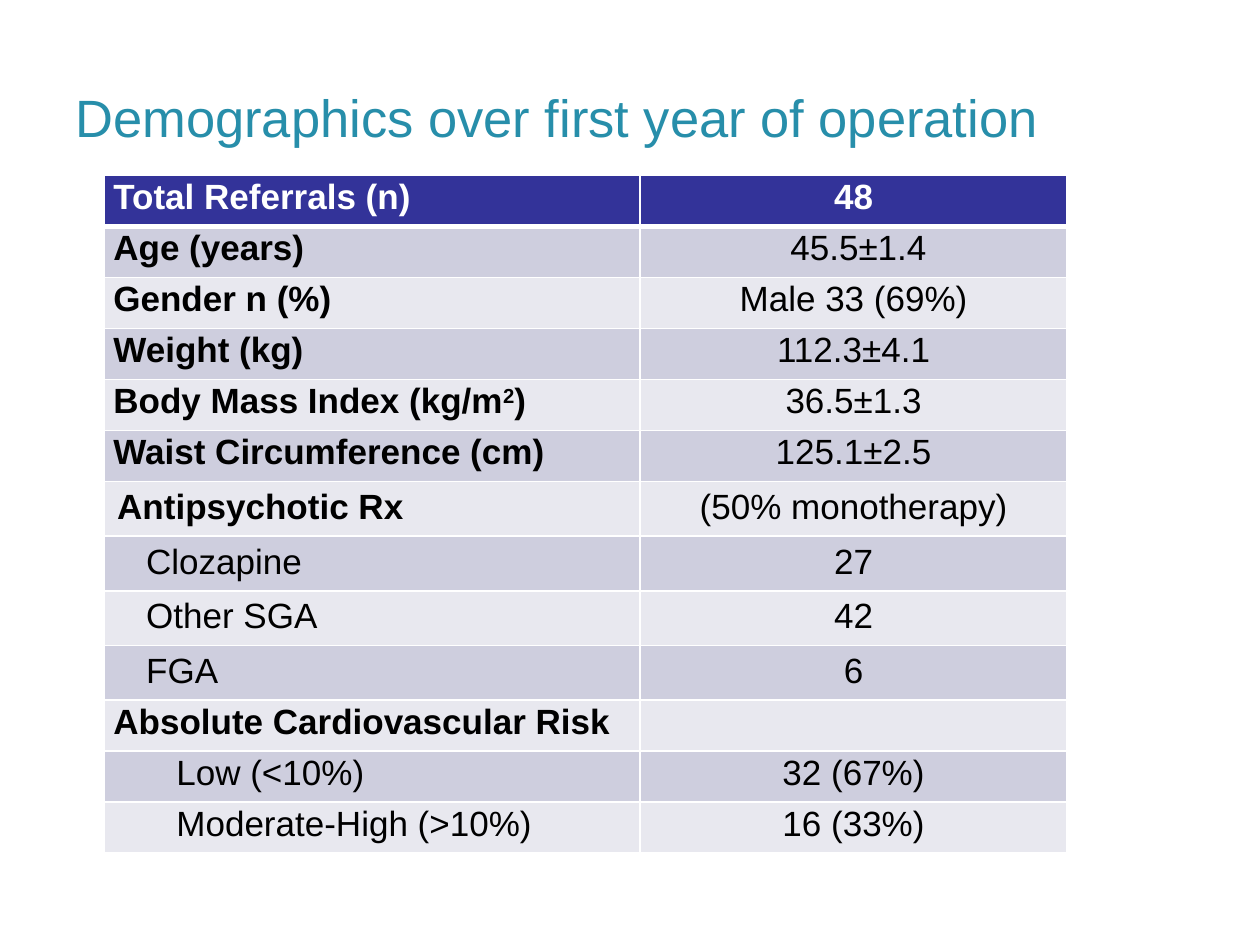
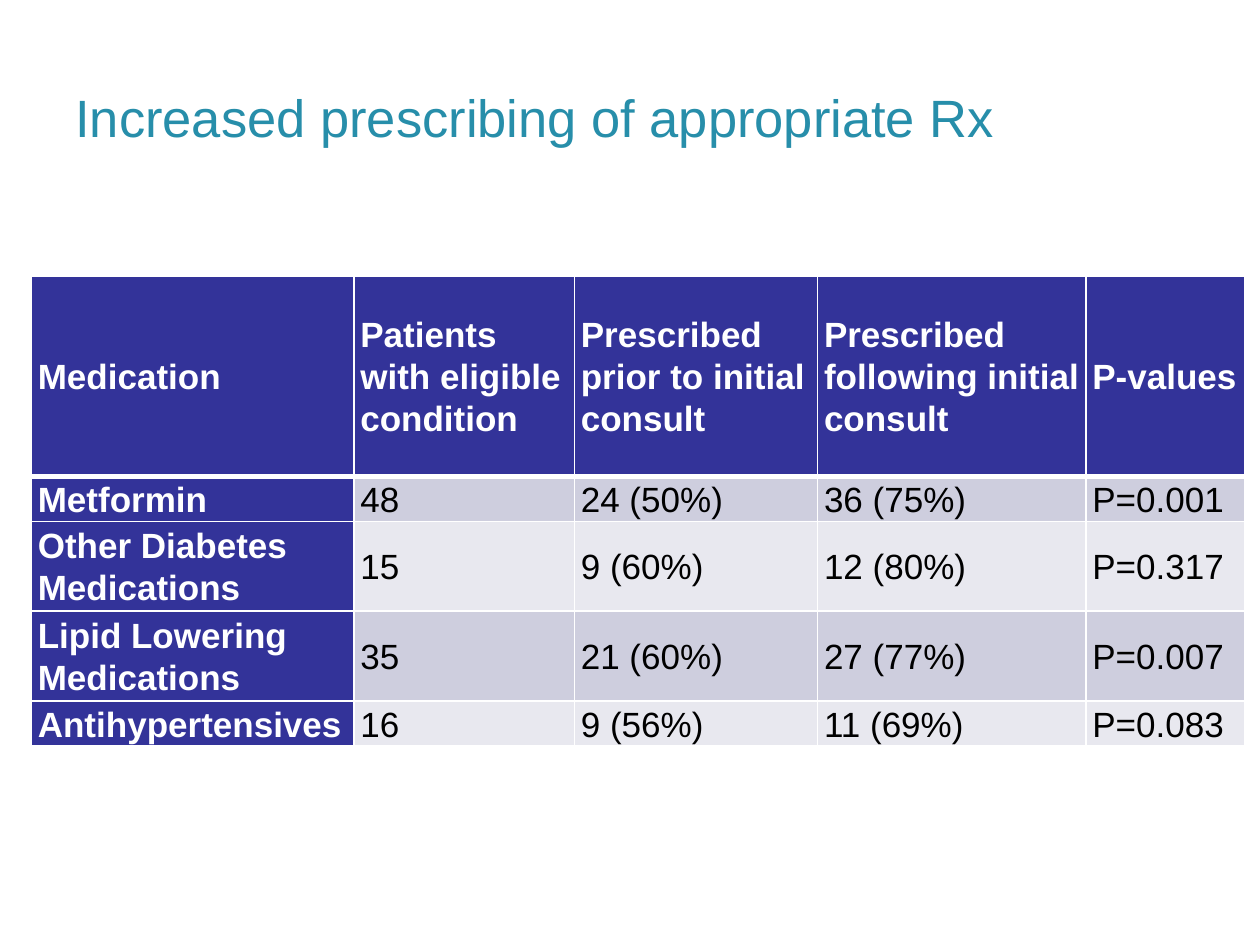
"""Build two clinic result slides, each with a title and a table."""
from lxml.etree import SubElement
from pptx import Presentation
from pptx.dml.color import RGBColor
from pptx.enum.text import MSO_ANCHOR, PP_ALIGN
from pptx.oxml.ns import qn
from pptx.util import Inches, Pt

FONT = "Arial"
TITLE_COLOUR = "278EAA"
HEADER_FILL = "333399"
BAND_FILLS = ("CECEDE", "E8E8EF")
WHITE, BLACK = "FFFFFF", "000000"
TITLE_BOX = (0.5, 0.3, 9, 1.25)

DEMOGRAPHICS_TITLE = "Demographics over first year of operation"
DEMOGRAPHICS = [
    ("Total Referrals (n)", "48"),
    ("Age (years)", " 45.5±1.4"),
    ("Gender n (%)", "Male 33 (69%)"),
    ("Weight (kg)", "112.3±4.1"),
    ("Body Mass Index (kg/m²)", "36.5±1.3"),
    ("Waist Circumference (cm)", "125.1±2.5"),
    ("Antipsychotic Rx", "(50% monotherapy)"),
    ("Clozapine", "27"),
    ("Other SGA", "42"),
    ("FGA", "6"),
    ("Absolute Cardiovascular Risk", ""),
    ("Low (<10%)", "32 (67%)"),
    ("Moderate-High (>10%)", "16 (33%)"),
]
DEMOGRAPHICS_HEIGHT = 5.27
DEMOGRAPHICS_INDENTS = {
    "Clozapine": 0.23, "Other SGA": 0.23, "FGA": 0.23,
    "Low (<10%)": 0.5, "Moderate-High (>10%)": 0.5,
}
ANTIPSYCHOTIC_ROWS = range(6, 10)

PRESCRIBING_TITLE = "Increased prescribing of appropriate Rx"
PRESCRIBING = [
    ("Medication", "Patients with eligible condition", "Prescribed prior to initial consult",
     "Prescribed following initial consult", "P-values"),
    ("Metformin", "48", "24 (50%)", "36 (75%)", "P=0.001"),
    ("Other Diabetes Medications", "15", "9 (60%)", "12 (80%)", "P=0.317"),
    ("Lipid Lowering Medications", "35", "21 (60%)", "27 (77%)", "P=0.007"),
    ("Antihypertensives", "16", "9 (56%)", "11 (69%)", "P=0.083"),
]


def colour(hex_value):
    return RGBColor.from_string(hex_value)


def style_run(run, size, hex_value, bold=False):
    run.font.name = FONT
    run.font.size = Pt(size)
    run.font.bold = bold
    run.font.color.rgb = colour(hex_value)


def add_titled_slide(deck, title):
    slide = deck.slides.add_slide(deck.slide_layouts[6])
    frame = slide.shapes.add_textbox(*map(Inches, TITLE_BOX)).text_frame
    frame.word_wrap = True
    frame.vertical_anchor = MSO_ANCHOR.MIDDLE
    frame.text = title
    style_run(frame.paragraphs[0].runs[0], 30, TITLE_COLOUR)
    return slide


def add_grid(slide, left, top, widths, heights, rows):
    table = slide.shapes.add_table(
        len(rows), len(widths), Inches(left), Inches(top),
        Inches(sum(widths)), Inches(sum(heights))).table
    table.horz_banding = False
    for column, width in zip(table.columns, widths):
        column.width = Inches(width)
    for row, height in zip(table.rows, heights):
        row.height = Inches(height)
    return table


def set_borders(cell, row):
    properties = cell._tc.get_or_add_tcPr()
    heavy_side = {0: "lnB", 1: "lnT"}.get(row)
    for side in ("lnL", "lnR", "lnT", "lnB"):
        width = Pt(3 if side == heavy_side else 1)
        line = SubElement(properties, qn(f"a:{side}"), w=str(width))
        fill = SubElement(line, qn("a:solidFill"))
        SubElement(fill, qn("a:srgbClr"), val=WHITE)


def fill_cell(cell, row, text, header, bold, align, inset=None, indent=0):
    set_borders(cell, row)
    cell.fill.solid()
    cell.fill.fore_color.rgb = colour(HEADER_FILL if header else BAND_FILLS[(row - 1) % 2])
    paragraph = cell.text_frame.paragraphs[0]
    paragraph.alignment = align
    if inset is not None:
        cell.margin_left = cell.margin_right = Inches(inset)
        cell.margin_top = cell.margin_bottom = 0
        paragraph.line_spacing = 1.07
        paragraph.space_after = Pt(8)
    if indent:
        properties = paragraph._p.get_or_add_pPr()
        properties.set("marL", str(Inches(indent)))
        properties.set("indent", "0")
    before, square, after = text.partition("²")
    for part, raised in ((before, False), ("2" if square else "", True), (after, False)):
        if part:
            run = paragraph.add_run()
            run.text = part
            style_run(run, 20, WHITE if header else BLACK, bold)
            if raised:
                run._r.get_or_add_rPr().set("baseline", "30000")


def build_demographics(deck):
    slide = add_titled_slide(deck, DEMOGRAPHICS_TITLE)
    count = len(DEMOGRAPHICS)
    table = add_grid(slide, 0.83, 1.39, (4.25, 3.39),
                     [DEMOGRAPHICS_HEIGHT / count] * count, DEMOGRAPHICS)
    for row, (measure, value) in enumerate(DEMOGRAPHICS):
        header = row == 0
        inset = None if row in ANTIPSYCHOTIC_ROWS else 0.07
        indent = DEMOGRAPHICS_INDENTS.get(measure, 0)
        fill_cell(table.cell(row, 0), row, measure, header, not indent,
                  PP_ALIGN.LEFT, inset, indent)
        fill_cell(table.cell(row, 1), row, value, header, header,
                  PP_ALIGN.CENTER, inset if value else None)


def build_prescribing(deck):
    slide = add_titled_slide(deck, PRESCRIBING_TITLE)
    table = add_grid(slide, 0.25, 2.19, (2.56, 1.75, 1.93, 2.13, 1.26),
                     (1.59, 0.35, 0.67, 0.67, 0.35), PRESCRIBING)
    for row, values in enumerate(PRESCRIBING):
        for column, value in enumerate(values):
            header = row == 0 or column == 0
            cell = table.cell(row, column)
            cell.vertical_anchor = MSO_ANCHOR.MIDDLE
            fill_cell(cell, row, value, header, header,
                      PP_ALIGN.LEFT if header else PP_ALIGN.JUSTIFY, 0.05)


def main():
    deck = Presentation()
    deck.slide_width, deck.slide_height = Inches(10), Inches(7.5)
    build_demographics(deck)
    build_prescribing(deck)
    deck.save("out.pptx")


if __name__ == "__main__":
    main()
